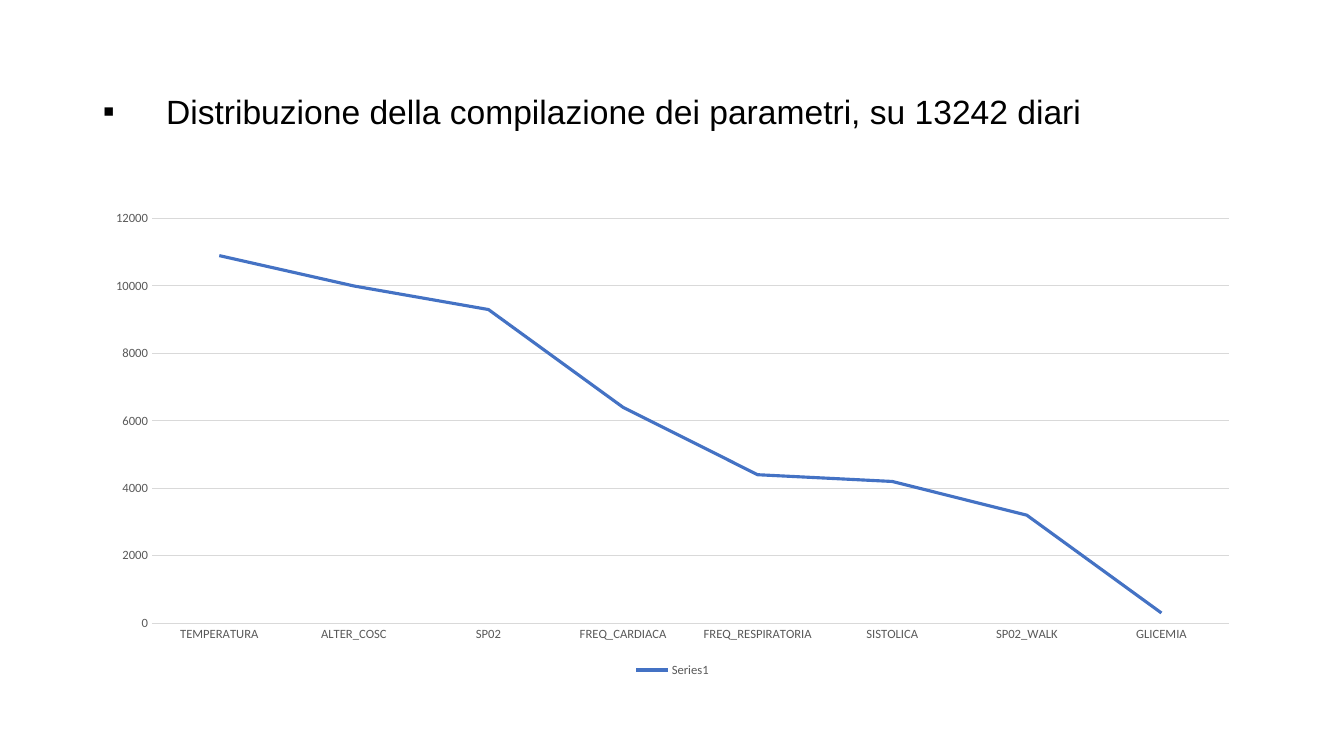
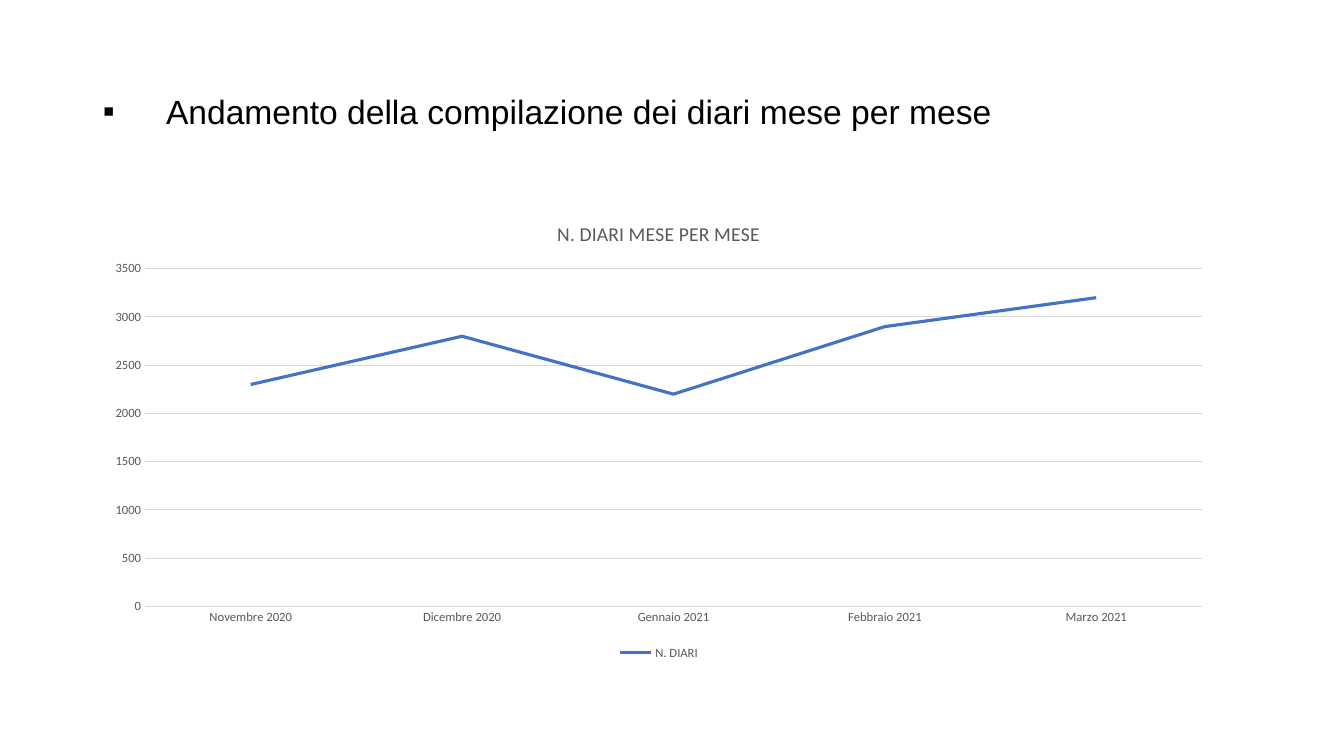
"""Build two slides, each with a bulleted title and a line chart on diary compilation."""
import pptx
import pptx.chart.data
import pptx.dml.color
import pptx.enum.chart
import pptx.enum.text
import pptx.oxml
import pptx.oxml.ns
import pptx.util
from pptx.util import Cm

COLORS = {"background": "FFFFFF", "title": "000000", "label": "595959",
          "grid": "D9D9D9", "series": "4472C4"}


def color(name):
    return pptx.dml.color.RGBColor.from_string(COLORS[name])


def format_font(font, name="Calibri", size=9, fill="label"):
    font.name = name
    font.size = pptx.util.Pt(size)
    font.bold = False
    font.color.rgb = color(fill)


def write_text(text_frame, text, bullet=None, indent=0, spacing=None, align=None, **font):
    text_frame.text = text
    paragraph = text_frame.paragraphs[0]
    paragraph.alignment = align
    paragraph.line_spacing = spacing
    if bullet:
        properties = paragraph._p.get_or_add_pPr()
        properties.set("marL", str(Cm(indent)))
        properties.set("indent", str(-Cm(indent)))
        namespace = pptx.oxml.ns.nsdecls("a")
        for element in (f'<a:buFont {namespace} typeface="Arial"/>',
                        f'<a:buChar {namespace} char="{bullet}"/>'):
            properties.append(pptx.oxml.parse_xml(element))
    format_font(paragraph.runs[0].font, **font)


def format_line(line, fill, width):
    line.color.rgb = color(fill)
    line.width = pptx.util.Pt(width)


class Deck:
    left, width = 2.34, 29.21

    def __init__(self):
        self.presentation = pptx.Presentation()
        self.presentation.slide_width = Cm(33.87)
        self.presentation.slide_height = Cm(19.05)
        self.slide = None

    def add_slide(self, title):
        self.slide = self.presentation.slides.add_slide(self.presentation.slide_layouts[5])
        background = self.slide.background.fill
        background.solid()
        background.fore_color.rgb = color("background")
        shape = self.slide.shapes.title
        shape.left, shape.top = Cm(self.left), Cm(1.01)
        shape.width, shape.height = Cm(self.width), Cm(3.68)
        frame = shape.text_frame
        frame.word_wrap = True
        frame.auto_size = pptx.enum.text.MSO_AUTO_SIZE.NONE
        frame.vertical_anchor = pptx.enum.text.MSO_ANCHOR.MIDDLE
        write_text(frame, title, bullet="▪", indent=1.59, spacing=0.9,
                   align=pptx.enum.text.PP_ALIGN.LEFT, name="Arial", size=24, fill="title")

    def add_line_chart(self, series_name, values, maximum, step, width, height, title=None):
        data = pptx.chart.data.CategoryChartData()
        data.categories = list(values)
        data.add_series(series_name, list(values.values()))
        chart = self.slide.shapes.add_chart(
            pptx.enum.chart.XL_CHART_TYPE.LINE, Cm(self.left), Cm(5.08),
            Cm(width), Cm(height), data).chart
        format_font(chart.font, size=10, fill="title")
        chart.has_title = title is not None
        if title:
            write_text(chart.chart_title.text_frame, title, size=14)
            chart.chart_title.include_in_layout = False
        chart.has_legend = True
        chart.legend.position = pptx.enum.chart.XL_LEGEND_POSITION.BOTTOM
        chart.legend.include_in_layout = False
        format_font(chart.legend.font)
        for axis in (chart.category_axis, chart.value_axis):
            axis.major_tick_mark = pptx.enum.chart.XL_TICK_MARK.NONE
            axis.minor_tick_mark = pptx.enum.chart.XL_TICK_MARK.NONE
            format_font(axis.tick_labels.font)
        format_line(chart.category_axis.format.line, "grid", 0.75)
        value_axis = chart.value_axis
        value_axis.format.line.fill.background()
        value_axis.minimum_scale, value_axis.maximum_scale = 0, maximum
        value_axis.major_unit = step
        value_axis.has_major_gridlines = True
        format_line(value_axis.major_gridlines.format.line, "grid", 0.75)
        plot = chart.plots[0]
        plot.vary_by_categories = False
        series = plot.series[0]
        series.smooth = False
        series.marker.style = pptx.enum.chart.XL_MARKER_STYLE.NONE
        format_line(series.format.line, "series", 2.25)


def main():
    deck = Deck()
    deck.add_slide("Distribuzione della compilazione dei parametri, su 13242 diari")
    deck.add_line_chart(
        "Series1",
        {"TEMPERATURA": 10900, "ALTER_COSC": 10000, "SP02": 9300, "FREQ_CARDIACA": 6400,
         "FREQ_RESPIRATORIA": 4400, "SISTOLICA": 4200, "SP02_WALK": 3200, "GLICEMIA": 300},
        maximum=12000, step=2000, width=deck.width, height=12.09)
    deck.add_slide("Andamento della compilazione dei diari mese per mese")
    deck.add_line_chart(
        "N. DIARI",
        {"Novembre 2020": 2300, "Dicembre 2020": 2800, "Gennaio 2021": 2200,
         "Febbraio 2021": 2900, "Marzo 2021": 3200},
        maximum=3500, step=500, width=28.52, height=11.66, title="N. DIARI MESE PER MESE")
    deck.presentation.save("out.pptx")


if __name__ == "__main__":
    main()
